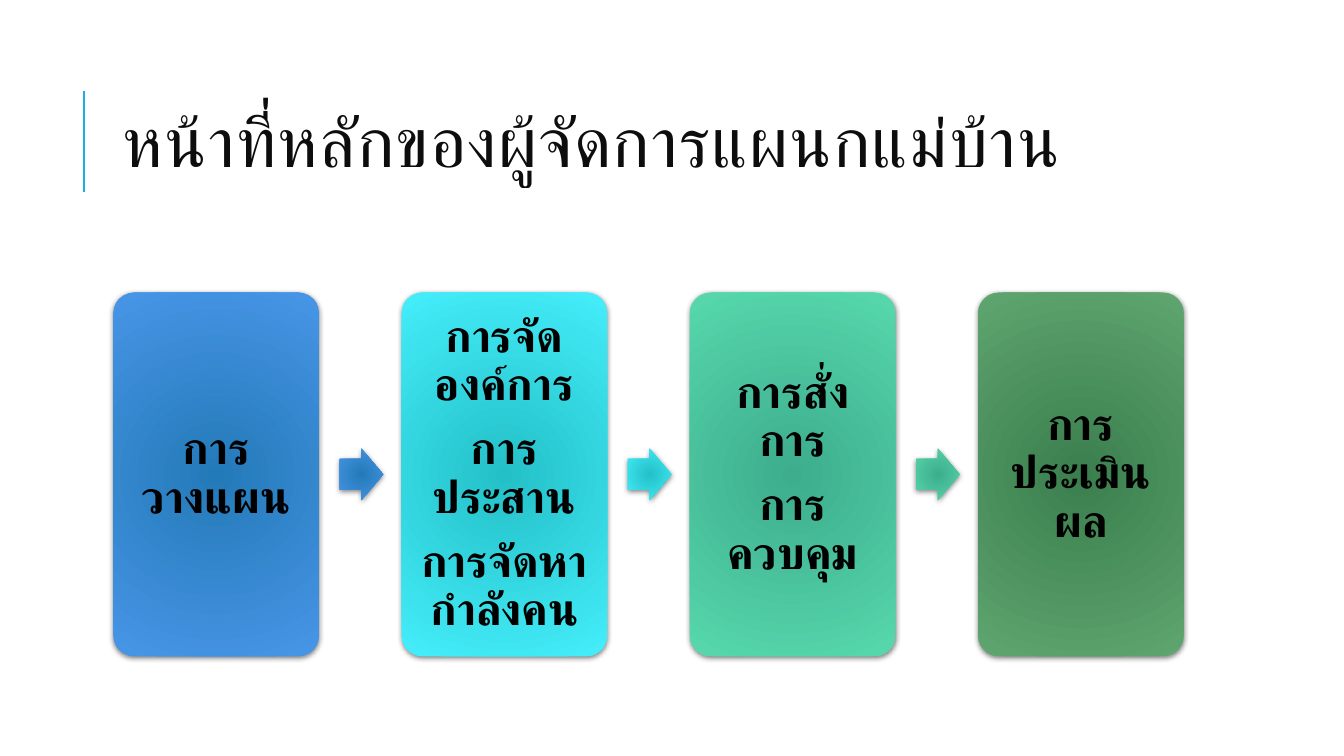
from lxml.etree import SubElement
from pptx import Presentation
from pptx.dml.color import RGBColor
from pptx.enum.shapes import MSO_CONNECTOR, MSO_SHAPE
from pptx.enum.text import MSO_ANCHOR, MSO_AUTO_SIZE, PP_ALIGN
from pptx.oxml.ns import qn
from pptx.util import Cm, Pt

STEPS = [
    (["การวางแผน"], "237AB8", "4895E7"),
    (["การจัดองค์การ", "การประสาน", "การจัดหากำลังคน"], "24C0C8", "44EEFA"),
    (["การสั่งการ", "การควบคุม"], "3DAD8D", "57D8AC"),
    (["การประเมินผล"], "3A7F4D", "5FA56F"),
]


def paint(color, value):
    color.rgb = RGBColor.from_string(value)


def add_run(para, text, font, size, color, bold=False):
    run = para.add_run()
    run.text = text
    run.font.name = font
    run.font.size = Pt(size)
    run.font.bold = bold
    paint(run.font.color, color)
    props = run._r.get_or_add_rPr()
    props.set("lang", "th-TH")
    SubElement(props, qn("a:cs"), typeface=font)
    return run


def add_glow(shape, inner, outer):
    """Fill from the centre outwards, with a soft shadow below."""
    shape.line.fill.background()
    shape.fill.gradient()
    for stop, value, place in zip(shape.fill.gradient_stops, (inner, outer), (0, 1)):
        paint(stop.color, value)
        stop.position = place
    props = shape._element.spPr
    grad = props.find(qn("a:gradFill"))
    grad.remove(grad.find(qn("a:lin")))
    ring = SubElement(grad, qn("a:path"), path="circle")
    SubElement(ring, qn("a:fillToRect"), {side: "100000" for side in "ltrb"})

    shape.shadow.inherit = False
    shade = SubElement(props.find(qn("a:effectLst")), qn("a:outerShdw"),
                       blurRad=str(Pt(4)), dist=str(Pt(1)), dir="5400000",
                       algn="ctr", rotWithShape="0")
    black = SubElement(shade, qn("a:srgbClr"), val="000000")
    SubElement(black, qn("a:alpha"), val="50000")


def add_title(slide, left, top, width, height):
    title = slide.shapes.title
    title.left, title.top, title.width, title.height = left, top, width, height
    frame = title.text_frame
    frame.word_wrap = True
    frame.auto_size = MSO_AUTO_SIZE.NONE
    frame.vertical_anchor = MSO_ANCHOR.MIDDLE
    para = frame.paragraphs[0]
    para.alignment = PP_ALIGN.LEFT
    para.line_spacing = 0.8
    run = add_run(para, "หน้าที่หลักของผู้จัดการแผนกแม่บ้าน", "Cabin", 50, "0D0D0D")
    run._r.get_or_add_rPr().set("spc", "100")

    x = left - Cm(0.73)
    rule = slide.shapes.add_connector(
        MSO_CONNECTOR.STRAIGHT, x, top + Cm(3.2), x, top + Cm(0.66))
    paint(rule.line.color, "1CADE4")
    rule.line.width = Pt(1.5)
    SubElement(rule._element.spPr, qn("a:effectLst"))


def add_card(slide, lines, inner, outer, left, top, width, height):
    card = slide.shapes.add_shape(MSO_SHAPE.ROUNDED_RECTANGLE, left, top, width, height)
    card.adjustments[0] = 0.1
    add_glow(card, inner, outer)
    frame = card.text_frame
    frame.word_wrap = True
    frame.vertical_anchor = MSO_ANCHOR.MIDDLE
    frame.margin_left = frame.margin_right = Cm(0.33)
    frame.margin_top = frame.margin_bottom = Cm(0.33)
    for i, line in enumerate(lines):
        para = frame.add_paragraph() if i else frame.paragraphs[0]
        para.alignment = PP_ALIGN.CENTER
        para.line_spacing = 0.9
        para.space_after = Pt(11.2)
        add_run(para, line, "Arial", 32, "000000", True)


def add_flow(slide, left, top, width, height):
    """Equal cards across the box, an arrow in each gap."""
    card, wide, tall = Cm(5.18), Cm(1.1), Cm(1.3)
    pitch = (width - card) // (len(STEPS) - 1)
    for i, (lines, inner, outer) in enumerate(STEPS):
        x = left + i * pitch
        add_card(slide, lines, inner, outer, x, top, card, height)
        if i < len(STEPS) - 1:
            arrow = slide.shapes.add_shape(
                MSO_SHAPE.RIGHT_ARROW, x + card + Cm(0.52),
                top + (height - tall) // 2, wide, tall)
            arrow.adjustments[0] = 0.6
            arrow.adjustments[1] = 0.5
            add_glow(arrow, inner, outer)


def main():
    deck = Presentation()
    deck.slide_width, deck.slide_height = Cm(33.87), Cm(19.05)
    slide = deck.slides.add_slide(deck.slide_layouts[5])
    add_title(slide, Cm(2.84), Cm(1.63), Cm(27), Cm(4.17))
    add_flow(slide, Cm(2.86), Cm(7.37), Cm(26.97), Cm(9.17))
    deck.save("out.pptx")


if __name__ == "__main__":
    main()
